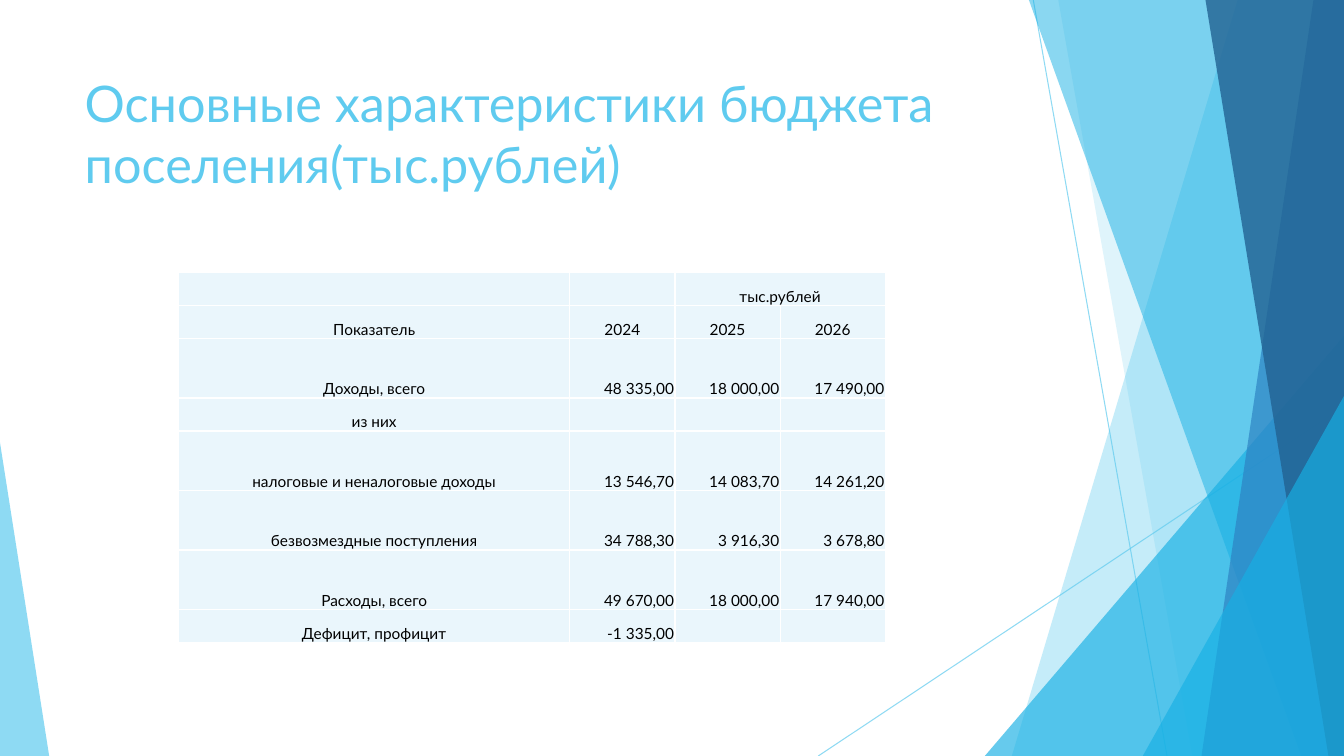
from lxml.etree import SubElement
from pptx import Presentation
from pptx.dml.color import RGBColor
from pptx.enum.shapes import MSO_CONNECTOR as Connector, MSO_SHAPE as Preset
from pptx.enum.text import MSO_ANCHOR as Anchor, MSO_AUTO_SIZE as AutoSize, PP_ALIGN as Align
from pptx.oxml.ns import qn
from pptx.util import Cm, Pt

TITLE = "Основные характеристики бюджета поселения(тыс.рублей)"
BUDGET = [
    ("", "", "тыс.рублей", ""),
    ("Показатель", "2024", "2025", "2026"),
    ("Доходы, всего", "48 335,00", "18 000,00", "17 490,00"),
    ("из них", "", "", ""),
    ("налоговые и неналоговые доходы", "13 546,70", "14 083,70", "14 261,20"),
    ("безвозмездные поступления", "34 788,30", "3 916,30", "3 678,80"),
    ("Расходы, всего", "49 670,00", "18 000,00", "17 940,00"),
    ("Дефицит, профицит", "-1 335,00", "", ""),
]
HEADER_ROWS = 2
TALL_ROWS = {2, 4, 5, 6}

THEME = {
    "font": "Lato", "title_size": Pt(36), "table_size": Pt(11),
    "sky": "5FCBEF", "cyan": "17B0E4", "blue": "2E83C3", "navy": "226292",
    "cell": "EAF6FC", "border": "FFFFFF", "text": "000000",
}
WIDTH, HEIGHT = 33.87, 19.05
RAYS = [((26.04, 0), (29.41, HEIGHT)), ((WIDTH, 10.24), (20.62, HEIGHT))]
DECOR = [
    ("facet", (31.19, 25.5), "sky", 36),
    ("facet", (26.67, 30.05), "sky", 20),
    ("triangle", (24.82, 8.46, WIDTH, 1), "cyan", 66),
    ("facet", (25.93, 32.79), "cyan", 50),
    ("facet", (33.1, 30.28), "blue", 70),
    ("facet", (30.38, 33.48), "navy", 80),
    ("triangle", (28.8, 9.98, WIDTH, 1), "cyan", 66),
    ("triangle", (0, 11.15, 1.24, 0), "sky", 70),
]
TITLE_BOX = {"left": Cm(1.88), "top": Cm(1.7), "width": Cm(23.88), "height": Cm(3.66)}
TITLE_FRAME = {"word_wrap": True, "auto_size": AutoSize.NONE, "vertical_anchor": Anchor.TOP}
CELL_FORMAT = {
    "vertical_anchor": Anchor.BOTTOM, "margin_left": Cm(0.02),
    "margin_right": Cm(0.02), "margin_top": Cm(0.02), "margin_bottom": 0,
}
TABLE_FLAGS = {"first_row": False, "horz_banding": False}
TABLE_LEFT, TABLE_TOP = 4.5, 6.87
COLUMN_WIDTHS = [9.86, 2.65, 2.65, 2.65]
ROW_HEIGHTS = [1.5 if row in TALL_ROWS else 0.83 for row in range(len(BUDGET))]


def apply(target, values):
    for name, value in values.items():
        setattr(target, name, value)


def paint(fill, color):
    fill.solid()
    fill.fore_color.rgb = RGBColor.from_string(THEME[color])


def write(paragraph, text, size, color, alignment):
    paragraph.alignment = alignment
    run = paragraph.add_run()
    run.text = text
    apply(run.font, {"name": THEME["font"], "size": size})
    run.font.color.rgb = RGBColor.from_string(THEME[color])


def set_opacity(shape, percent):
    color = shape.element.xpath("./p:spPr//a:srgbClr")[0]
    SubElement(color, qn("a:alpha"), val=str(percent * 1000))


def add_ray(shapes, start, end):
    ray = shapes.add_connector(Connector.STRAIGHT, *map(Cm, start + end))
    ray.line.width = Pt(0.75)
    paint(ray.line.fill, "sky")
    set_opacity(ray, 70)
    SubElement(ray.element.spPr, qn("a:effectLst"))


def add_facet(shapes, top_x, bottom_x):
    corners = [(WIDTH, 0), (WIDTH, HEIGHT), (bottom_x, HEIGHT)]
    builder = shapes.build_freeform(Cm(top_x), 0)
    builder.add_line_segments([(Cm(x), Cm(y)) for x, y in corners], close=True)
    return builder.convert_to_shape()


def add_triangle(shapes, left, top, right, apex):
    box = map(Cm, (left, top, right - left, HEIGHT - top))
    triangle = shapes.add_shape(Preset.ISOSCELES_TRIANGLE, *box)
    triangle.adjustments[0] = apex
    return triangle


def add_decor(shapes):
    makers = {"facet": add_facet, "triangle": add_triangle}
    for start, end in RAYS:
        add_ray(shapes, start, end)
    for kind, geometry, color, opacity in DECOR:
        shape = makers[kind](shapes, *geometry)
        shape.shadow.inherit = False
        shape.line.fill.background()
        paint(shape.fill, color)
        set_opacity(shape, opacity)


def add_borders(cell):
    properties = cell._tc.get_or_add_tcPr()
    for side in ("a:lnL", "a:lnR", "a:lnT", "a:lnB"):
        line = SubElement(properties, qn(side), w=str(Pt(1)))
        fill = SubElement(line, qn("a:solidFill"))
        SubElement(fill, qn("a:srgbClr"), val=THEME["border"])


def add_budget_table(shapes):
    frame = shapes.add_table(
        len(BUDGET), len(COLUMN_WIDTHS), Cm(TABLE_LEFT), Cm(TABLE_TOP),
        Cm(sum(COLUMN_WIDTHS)), Cm(sum(ROW_HEIGHTS)))
    table = frame.table
    apply(table, TABLE_FLAGS)
    for column, width in zip(table.columns, COLUMN_WIDTHS):
        column.width = Cm(width)
    for row, height in zip(table.rows, ROW_HEIGHTS):
        row.height = Cm(height)
    table.cell(0, 2).merge(table.cell(0, 3))
    for row, texts in enumerate(BUDGET):
        for column, text in enumerate(texts):
            cell = table.cell(row, column)
            apply(cell, CELL_FORMAT)
            add_borders(cell)
            paint(cell.fill, "cell")
            if text:
                centred = column == 0 or row < HEADER_ROWS
                write(cell.text_frame.paragraphs[0], text, THEME["table_size"],
                      "text", Align.CENTER if centred else Align.RIGHT)


def main():
    presentation = Presentation()
    apply(presentation, {"slide_width": Cm(WIDTH), "slide_height": Cm(HEIGHT)})
    slide = presentation.slides.add_slide(presentation.slide_layouts[5])
    title = slide.shapes.title
    apply(title, TITLE_BOX)
    apply(title.text_frame, TITLE_FRAME)
    write(title.text_frame.paragraphs[0], TITLE, THEME["title_size"], "sky", Align.LEFT)
    add_decor(slide.shapes)
    add_budget_table(slide.shapes)
    presentation.save("out.pptx")


if __name__ == "__main__":
    main()
